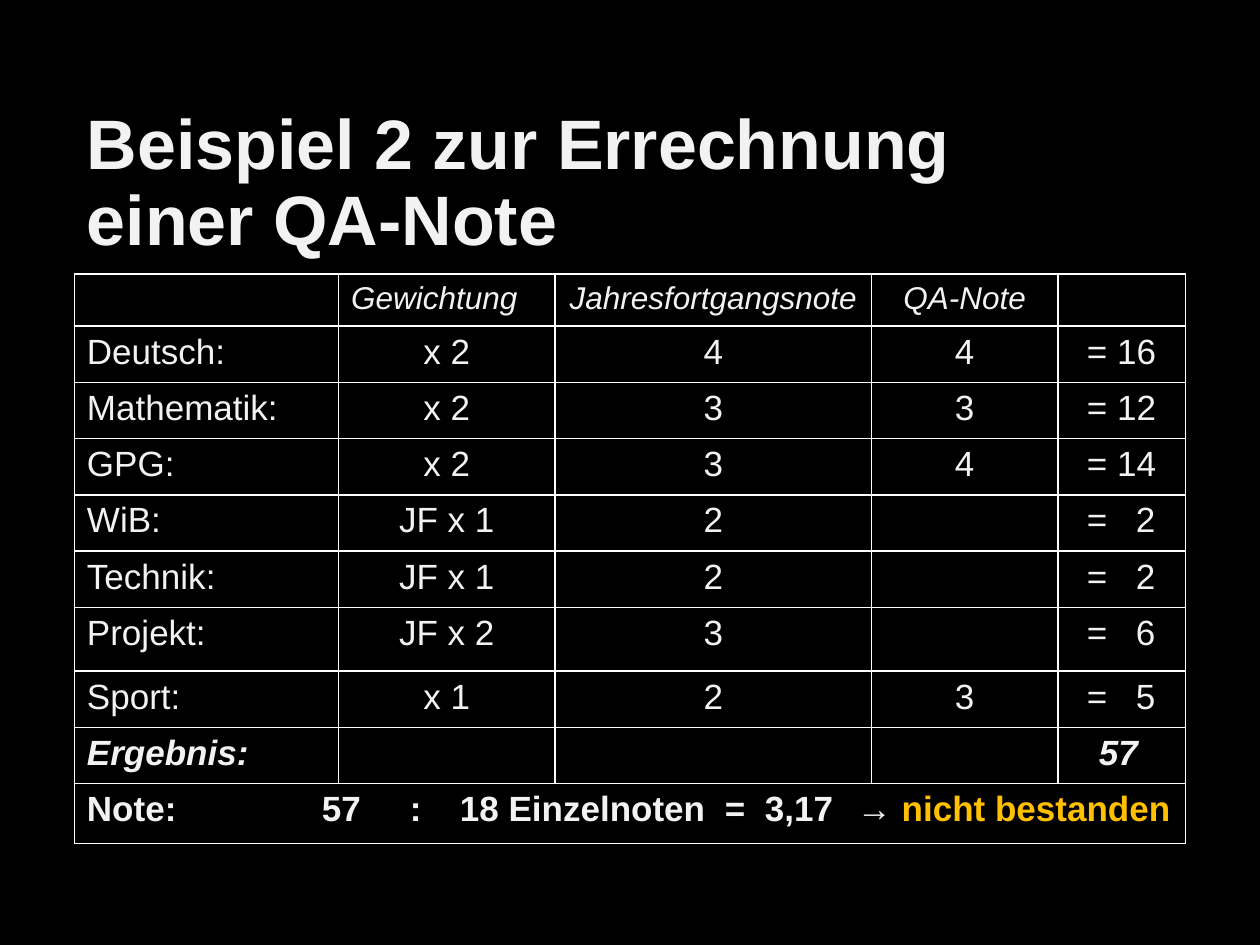
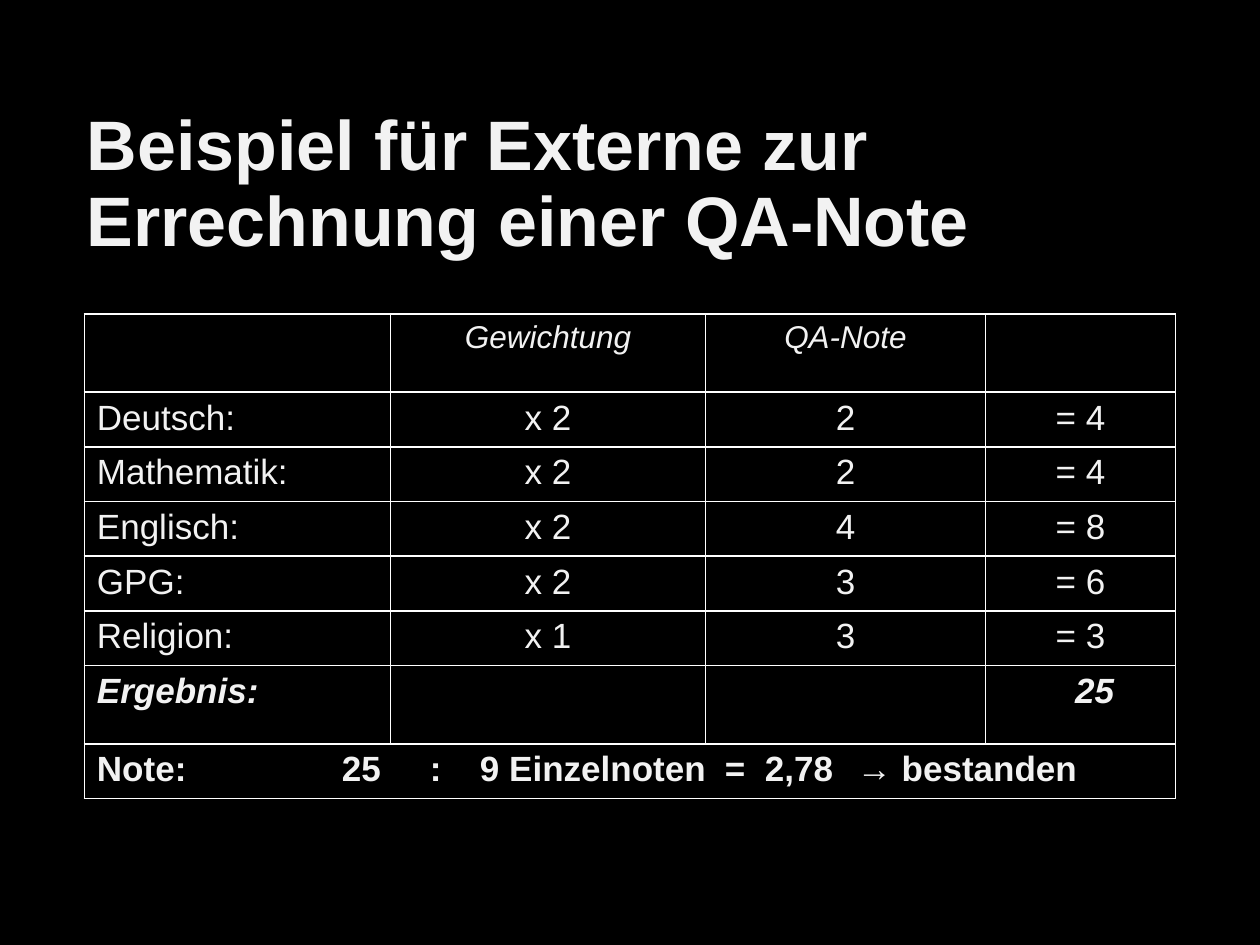
"""Build two slides that show how a QA grade is calculated."""
from lxml.etree import SubElement
from pptx import Presentation
from pptx.dml.color import RGBColor
from pptx.enum.text import MSO_ANCHOR, MSO_AUTO_SIZE, PP_ALIGN
from pptx.oxml import parse_xml
from pptx.oxml.ns import nsdecls, qn
from pptx.util import Pt

BLACK, WHITE, LIGHT, AMBER = "000000", "FFFFFF", "F2F2F2", "FFC000"
TITLE = {"name": "Arial", "size": Pt(40), "bold": True, "italic": False}
HEADER = {"name": "Arial", "size": Pt(18), "bold": False, "italic": True}
BODY = HEADER | {"size": Pt(20), "italic": False}
TOTAL = BODY | {"bold": True, "italic": True}
NOTE = BODY | {"bold": True}
TITLE_FRAME = {"word_wrap": True, "auto_size": MSO_AUTO_SIZE.NONE,
               "vertical_anchor": MSO_ANCHOR.MIDDLE}
PLAIN_TABLE = {"first_row": False, "horz_banding": False}
CELL_INSET = 7.2
DIGIT_TAB = 28

QA_EXAMPLE = {
    "title": "Beispiel 2 zur Errechnung einer QA-Note",
    "title_top": 60.5,
    "position": (42.5, 156.7),
    "columns": [151, 123.8, 180.7, 106.6, 73],
    "heights": [29.7] + [32.15] * 5 + [36.4] + [32.15] * 2 + [34.3],
    "header": ["", "Gewichtung", "Jahresfortgangsnote", "QA-Note", ""],
    "subjects": [
        ["Deutsch:", "x 2", "4", "4", "= 16"],
        ["Mathematik:", "x 2", "3", "3", "= 12"],
        ["GPG:", "x 2", "3", "4", "= 14"],
        ["WiB:", "JF x 1", "2", "", "=\t2"],
        ["Technik:", "JF x 1", "2", "", "=\t2"],
        ["Projekt:", "JF x 2", "3", "", "=\t6"],
        ["Sport:", "x 1", "2", "3", "=\t5"],
    ],
    "total": "57",
    "total_indent": 16.2,
    "result_indent": 9.4,
    "header_left": (0, 1),
    "note": "Note:\t57\t:\t18 Einzelnoten\t=\t3,17\t→ ",
    "note_tabs": [134.3, 184.6, 213.1, 364.6, 387.4, 440],
    "verdict": ("nicht bestanden", AMBER),
}
EXTERNAL_EXAMPLE = {
    "title": "Beispiel für Externe zur Errechnung einer QA-Note",
    "title_top": 61.2,
    "position": (48.2, 179.3),
    "columns": [175, 180, 160, 108.6],
    "heights": [44.8] + [31.25] * 5 + [44.8, 31.25],
    "header": ["", "Gewichtung", "QA-Note", ""],
    "subjects": [
        ["Deutsch:", "x 2", "2", "= 4"],
        ["Mathematik:", "x 2", "2", "= 4"],
        ["Englisch:", "x 2", "4", "= 8"],
        ["GPG:", "x 2", "3", "= 6"],
        ["Religion:", "x 1", "3", "= 3"],
    ],
    "total": "25",
    "total_indent": 44,
    "result_indent": None,
    "header_left": (0,),
    "note": "Note:\t25\t:\t9 Einzelnoten\t=\t2,78\t→ ",
    "note_tabs": [140, 190.3, 218.9, 358.9, 381.7, 434.3],
    "verdict": ("bestanden", LIGHT),
}


def rgb(hex_code):
    """Return the colour for a hex string."""
    return RGBColor.from_string(hex_code)


def apply(target, values):
    """Set attributes of the target from a dict."""
    for name, value in values.items():
        setattr(target, name, value)


def add_run(paragraph, text, style, color=LIGHT):
    """Append a formatted run to a paragraph."""
    run = paragraph.add_run()
    run.text = text
    apply(run.font, style)
    run.font.color.rgb = rgb(color)


def add_tabs(paragraph, stops):
    """Give a paragraph left tab stops in points."""
    tab_list = SubElement(paragraph._p.get_or_add_pPr(), qn("a:tabLst"))
    for stop in stops:
        SubElement(tab_list, qn("a:tab"), pos=str(Pt(stop)), algn="l")


def set_title(slide, text, top):
    """Place and format the slide title."""
    title = slide.shapes.title
    apply(title, {"left": Pt(42.5), "top": Pt(top), "width": Pt(540), "height": Pt(90)})
    apply(title.text_frame, TITLE_FRAME)
    paragraph = title.text_frame.paragraphs[0]
    apply(paragraph, {"alignment": PP_ALIGN.LEFT, "line_spacing": 0.9})
    add_run(paragraph, text, TITLE)


def frame_cell(cell):
    """Clear the cell fill and draw thin white borders."""
    cell.fill.background()
    properties = cell._tc.get_or_add_tcPr()
    for index, side in enumerate("LRTB"):
        properties.insert(index, parse_xml(
            f'<a:ln{side} {nsdecls("a")} w="{Pt(1)}"><a:solidFill>'
            f'<a:srgbClr val="{WHITE}"/></a:solidFill></a:ln{side}>'))


def fill_cell(cell, text, style, centered=False, indent=0, tabs=()):
    """Write one cell and return its paragraph."""
    paragraph = cell.text_frame.paragraphs[0]
    paragraph.alignment = PP_ALIGN.CENTER if centered else PP_ALIGN.LEFT
    cell.margin_left = Pt(CELL_INSET + indent)
    if tabs:
        add_tabs(paragraph, tabs)
    if text:
        add_run(paragraph, text, style)
    return paragraph


def add_grade_table(slide, example):
    """Add the framed table with subjects, total and final note."""
    columns, heights = example["columns"], example["heights"]
    left, top = example["position"]
    table = slide.shapes.add_table(
        len(heights), len(columns), Pt(left), Pt(top),
        Pt(sum(columns)), Pt(sum(heights))).table
    apply(table, PLAIN_TABLE)
    for column, width in zip(table.columns, columns):
        column.width = Pt(width)
    for row, height in zip(table.rows, heights):
        row.height = Pt(height)
    for cell in table.iter_cells():
        frame_cell(cell)

    for index, label in enumerate(example["header"]):
        fill_cell(table.cell(0, index), label, HEADER, index not in example["header_left"])
    last = len(columns) - 1
    for row, subject in enumerate(example["subjects"], start=1):
        for index, value in enumerate(subject):
            cell = table.cell(row, index)
            if index == last and example["result_indent"]:
                fill_cell(cell, value, BODY, indent=example["result_indent"],
                          tabs=[DIGIT_TAB])
            else:
                fill_cell(cell, value, BODY, centered=index > 0)

    total_row, note_row = len(heights) - 2, len(heights) - 1
    fill_cell(table.cell(total_row, 0), "Ergebnis:", TOTAL)
    fill_cell(table.cell(total_row, last), example["total"], TOTAL,
              indent=example["total_indent"])
    note = table.cell(note_row, 0)
    note.merge(table.cell(note_row, last))
    paragraph = fill_cell(note, example["note"], NOTE, tabs=example["note_tabs"])
    verdict, color = example["verdict"]
    add_run(paragraph, verdict, NOTE, color)


def main():
    """Build and save the presentation."""
    deck = Presentation()
    apply(deck, {"slide_width": Pt(720), "slide_height": Pt(540)})
    backdrop = deck.slide_master.background.fill
    backdrop.solid()
    backdrop.fore_color.rgb = rgb(BLACK)
    title_only = deck.slide_layouts.get_by_name("Title Only")
    for example in (QA_EXAMPLE, EXTERNAL_EXAMPLE):
        slide = deck.slides.add_slide(title_only)
        set_title(slide, example["title"], example["title_top"])
        add_grade_table(slide, example)
    deck.save("out.pptx")


if __name__ == "__main__":
    main()
